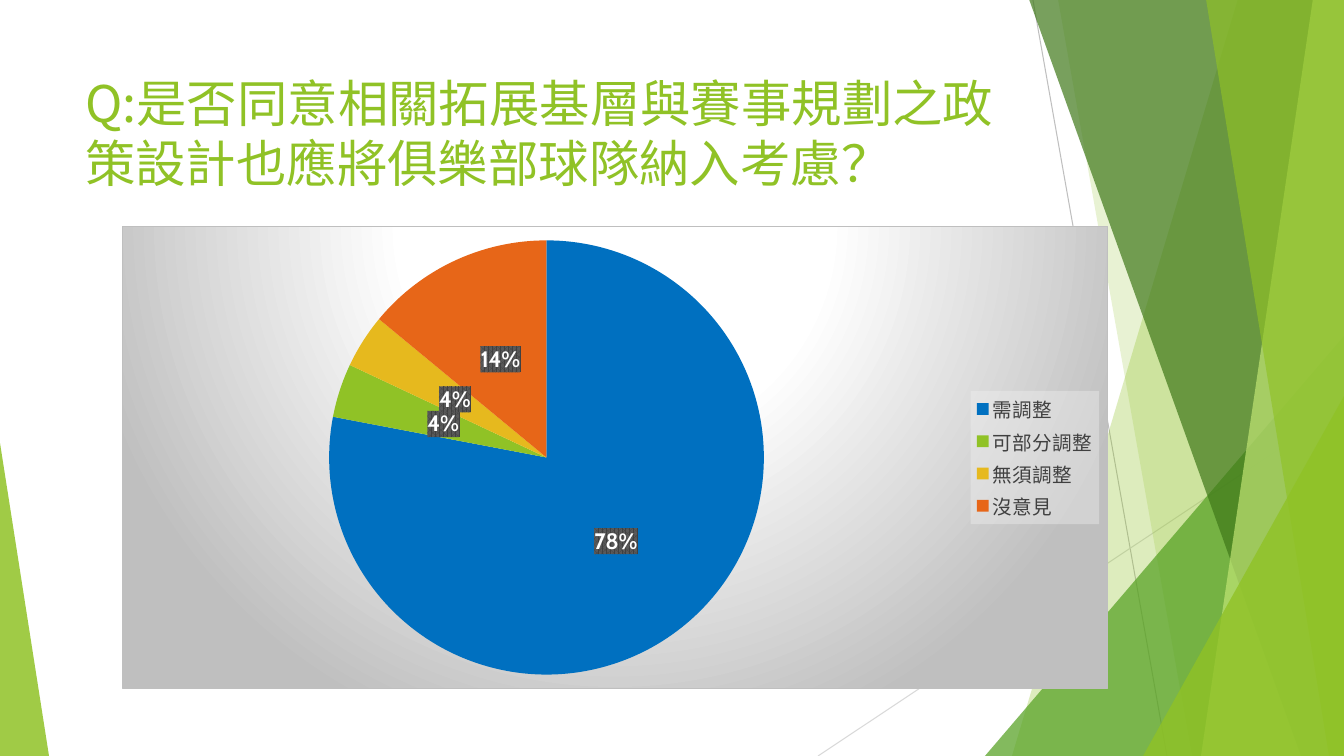
"""Build a survey slide with a pie chart and a green faceted frame."""
import pptx
import pptx.chart.data
import pptx.dml.color
import pptx.enum.chart
import pptx.enum.shapes
import pptx.enum.text
import pptx.oxml
import pptx.oxml.ns
import pptx.util

W, H = 1344, 756
EMU_PER_PX = 914400 / 100.8
GREEN = "90C226"
NS = pptx.oxml.ns.nsdecls("a", "c")
ANSWERS = [
    ("需調整", 78, "0070C0"),
    ("可部分調整", 4, GREEN),
    ("無須調整", 4, "E6B91E"),
    ("沒意見", 14, "E76618"),
]


def px(n):
    return pptx.util.Emu(round(n * EMU_PER_PX))


def box(*lengths):
    return [px(n) for n in lengths]


def rgb(color):
    return pptx.dml.color.RGBColor.from_string(color)


def style_font(font, size, color, name="Cabin", bold=False):
    font.size = pptx.util.Pt(size)
    font.bold = bold
    font.name = name
    font.color.rgb = rgb(color)


def write(tf, text, **fmt):
    p = tf.paragraphs[0]
    r = p.add_run()
    r.text = text
    style_font(r.font, **fmt)
    ea = pptx.oxml.parse_xml(f'<a:ea {NS} typeface="{r.font.name}"/>')
    r.font._element.append(ea)


def paint(sp, color, opacity):
    sp.shadow.inherit = False
    sp.line.fill.background()
    sp.fill.solid()
    sp.fill.fore_color.rgb = rgb(color)
    clr = sp._element.spPr.find(".//" + pptx.oxml.ns.qn("a:srgbClr"))
    clr.append(pptx.oxml.parse_xml(f'<a:alpha {NS} val="{opacity * 1000}"/>'))


def add_line(s, ends, color):
    cn = s.shapes.add_connector(pptx.enum.shapes.MSO_CONNECTOR.STRAIGHT, *box(*ends))
    cn.line.color.rgb = rgb(color)
    cn.line.width = pptx.util.Pt(0.75)
    cn._element.spPr.append(pptx.oxml.parse_xml(f"<a:effectLst {NS}/>"))


def add_band(s, top, bottom, color, opacity):
    """Fill from a slanted left edge to the right side of the slide."""
    fb = s.shapes.build_freeform(top, -1, scale=EMU_PER_PX)
    fb.add_line_segments([(W, -1), (W, H), (bottom, H)], close=True)
    paint(fb.convert_to_shape(), color, opacity)


def add_triangle(s, x, y, w, apex, color, opacity):
    kind = pptx.enum.shapes.MSO_SHAPE.ISOSCELES_TRIANGLE
    sp = s.shapes.add_shape(kind, *box(x, y, w, H - y))
    sp.adjustments[0] = apex
    paint(sp, color, opacity)


def add_frame(s):
    add_line(s, (1033, 0, 1167, H), "BFBFBF")
    add_line(s, (W, 406, 818, H), "D9D9D9")
    add_band(s, 1238, 1012, GREEN, 30)
    add_band(s, 1058, 1192, GREEN, 20)
    add_triangle(s, 985, 336, 359, 1, "54A021", 72)
    add_band(s, 1029, 1301, "3F7819", 70)
    add_band(s, 1313, 1201, "C0E474", 70)
    add_band(s, 1206, 1329, GREEN, 65)
    add_triangle(s, 1143, 396, 201, 1, GREEN, 80)
    add_triangle(s, 0, 443, 49, 0, GREEN, 85)


def set_area(element, fill):
    """Put a shape format in front of the text format of a chart part."""
    sppr = pptx.oxml.parse_xml(f"<c:spPr {NS}>{fill}</c:spPr>")
    element.find(pptx.oxml.ns.qn("c:txPr")).addprevious(sppr)


def srgb(color, inner=""):
    return f'<a:srgbClr val="{color}">{inner}</a:srgbClr>'


def add_pie(s):
    data = pptx.chart.data.CategoryChartData()
    data.categories = [name for name, _, _ in ANSWERS]
    data.add_series("Series 1", [value for _, value, _ in ANSWERS])
    kind = pptx.enum.chart.XL_CHART_TYPE.PIE
    chart = s.shapes.add_chart(kind, *box(122, 226, 986, 463), data).chart
    chart.has_title = False
    style_font(chart.font, 10, "000000")
    stops = "".join(
        f'<a:gs pos="{pos * 1000}">{srgb(color)}</a:gs>'
        for pos, color in [(0, "FFFFFF"), (39, "FFFFFF"), (100, "BFBFBF")]
    )
    set_area(
        chart._chartSpace,
        f'<a:gradFill><a:gsLst>{stops}</a:gsLst><a:path path="circle">'
        '<a:fillToRect l="50000" t="-80000" r="50000" b="180000"/></a:path></a:gradFill>'
        f'<a:ln w="9525"><a:solidFill>{srgb("BFBFBF")}</a:solidFill></a:ln>',
    )

    chart.has_legend = True
    chart.legend.position = pptx.enum.chart.XL_LEGEND_POSITION.RIGHT
    chart.legend.include_in_layout = False
    style_font(chart.legend.font, 14, "404040")
    pale = srgb("F2F2F2", '<a:alpha val="39000"/>')
    set_area(chart.legend._element, f"<a:solidFill>{pale}</a:solidFill>")

    plot = chart.plots[0]
    plot.vary_by_categories = True
    series = plot.series[0]
    for i, (_, _, color) in enumerate(ANSWERS):
        fmt = series.points[i].format
        fmt.fill.solid()
        fmt.fill.fore_color.rgb = rgb(color)
        fmt.line.fill.background()

    labels = series.data_labels
    labels.show_percentage = True
    labels.show_value = False
    labels.number_format = "0%"
    labels.number_format_is_linked = False
    labels.position = pptx.enum.chart.XL_LABEL_POSITION.CENTER
    style_font(labels.font, 16, "FFFFFF", bold=True)
    set_area(
        labels._element,
        f'<a:pattFill prst="pct75"><a:fgClr>{srgb("404040")}</a:fgClr>'
        f'<a:bgClr>{srgb("595959")}</a:bgClr></a:pattFill>',
    )


def add_title(s, text):
    sp = s.shapes.title
    sp.left, sp.top, sp.width, sp.height = box(75, 67, 948, 145)
    tf = sp.text_frame
    tf.word_wrap = True
    tf.auto_size = pptx.enum.text.MSO_AUTO_SIZE.NONE
    tf.vertical_anchor = pptx.enum.text.MSO_ANCHOR.TOP
    tf.paragraphs[0].alignment = pptx.enum.text.PP_ALIGN.LEFT
    write(tf, text, size=36, color=GREEN, name="Noto Sans CJK SC")


def main():
    prs = pptx.Presentation()
    prs.slide_width, prs.slide_height = box(W, H)
    s = prs.slides.add_slide(prs.slide_layouts[5])
    add_frame(s)
    add_title(s, "Q:是否同意相關拓展基層與賽事規劃之政策設計也應將俱樂部球隊納入考慮？")
    add_pie(s)
    prs.save("out.pptx")


if __name__ == "__main__":
    main()
